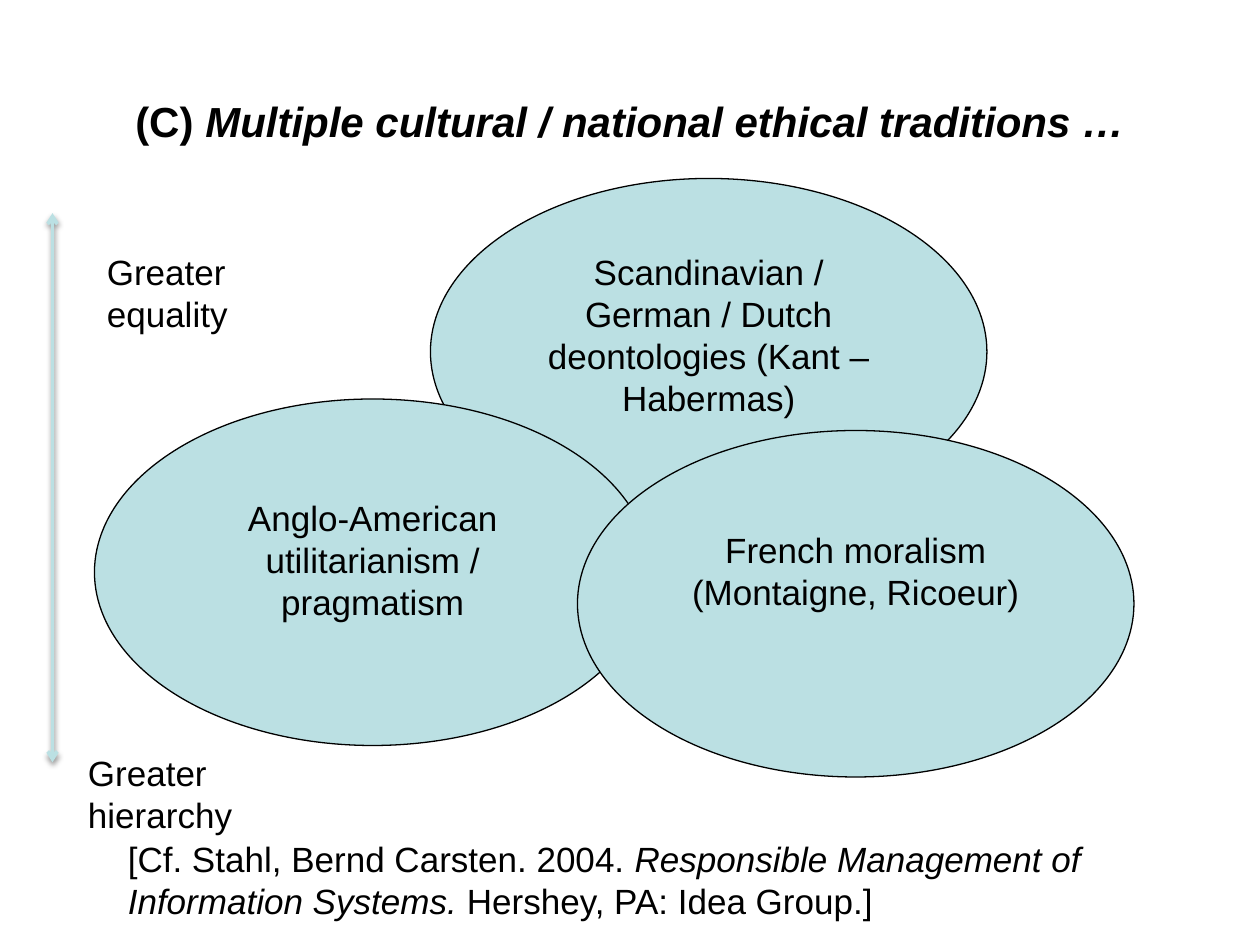
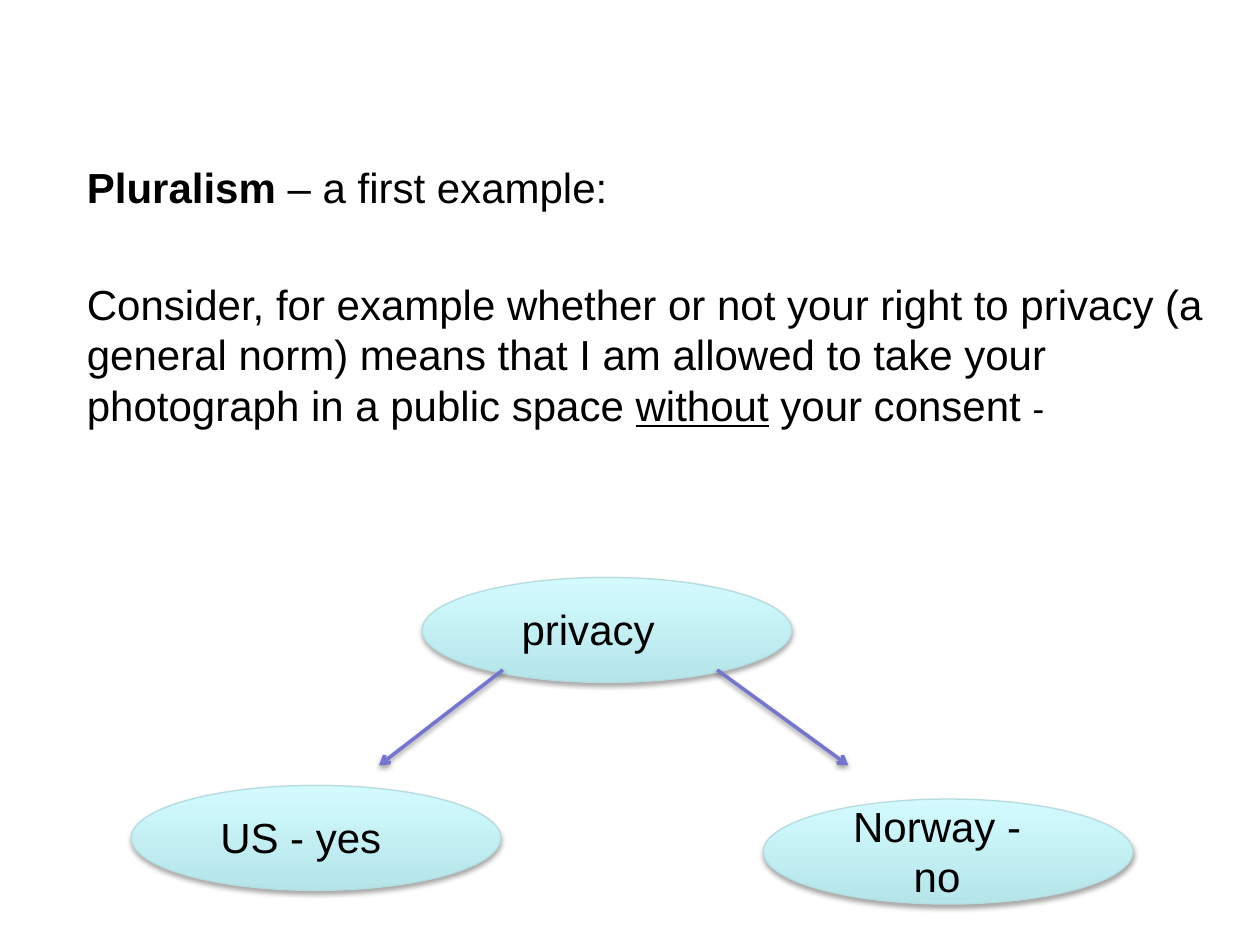
from lxml import etree
from pptx import Presentation
from pptx import util as u
from pptx.dml.color import RGBColor
from pptx.enum import shapes as kinds, text as t
from pptx.oxml import parse_xml
from pptx.oxml.ns import nsdecls, qn

# Grid of 120 columns by 90 rows; one cell is a twelfth of an inch.
COLUMNS, ROWS = 120, 90
CELL = u.Inches(10) // COLUMNS

FONT = "Arial"
BLACK = RGBColor(0x00, 0x00, 0x00)
PALE_TEAL = RGBColor(0xBB, 0xE0, 0xE3)
GRADIENT = (RGBColor(0xB5, 0xE5, 0xE9), RGBColor(0xD3, 0xFB, 0xFF))
BUBBLE_EDGE = RGBColor(0xB6, 0xDC, 0xDF)
VIOLET = RGBColor(0x75, 0x75, 0xD1)
CENTER = t.PP_ALIGN.CENTER


def cells(*values):
    return [round(value * CELL) for value in values]


def add_text(shapes, box, *paragraphs, size=20, align=None, spacing=None, gap=0, grow=True):
    """Each paragraph is a list of (text, font settings) runs, or a plain string."""
    frame = shapes.add_textbox(*cells(*box)).text_frame
    frame.word_wrap = True
    frame.auto_size = t.MSO_AUTO_SIZE.SHAPE_TO_FIT_TEXT if grow else t.MSO_AUTO_SIZE.NONE
    for index, runs in enumerate(paragraphs):
        paragraph = frame.add_paragraph() if index else frame.paragraphs[0]
        paragraph.alignment = align
        paragraph.line_spacing = spacing
        paragraph.space_before = u.Pt(gap if index else 0)
        for words, settings in [(runs, {})] if isinstance(runs, str) else runs:
            run = paragraph.add_run()
            run.text = words
            run.font.name = FONT
            run.font.size = u.Pt(size)
            run.font.color.rgb = BLACK
            for name, value in settings.items():
                setattr(run.font, name, value)


def add_shadow(shape, opacity, distance):
    properties = shape._element.spPr
    for effects in properties.findall(qn("a:effectLst")):
        properties.remove(effects)
    properties.append(parse_xml(
        f'<a:effectLst {nsdecls("a")}><a:outerShdw blurRad="{u.Pt(3.1)}" '
        f'dist="{u.Pt(distance)}" dir="5400000" rotWithShape="0"><a:srgbClr val="000000">'
        f'<a:alpha val="{opacity * 1000}"/></a:srgbClr></a:outerShdw></a:effectLst>'))


def add_ellipse(shapes, box, edge):
    ellipse = shapes.add_shape(kinds.MSO_SHAPE.OVAL, *cells(*box))
    ellipse.shadow.inherit = False
    ellipse.line.color.rgb = edge
    ellipse.line.width = u.Pt(0.75)
    return ellipse


def add_arrow(shapes, start, end, color, both_ends=False):
    arrow = shapes.add_connector(kinds.MSO_CONNECTOR.STRAIGHT, *cells(*start, *end))
    arrow.line.color.rgb = color
    arrow.line.width = u.Pt(2)
    line = arrow.line._get_or_add_ln()
    for tag in ("a:headEnd", "a:tailEnd") if both_ends else ("a:tailEnd",):
        etree.SubElement(line, qn(tag), type="arrow")
    add_shadow(arrow, opacity=38, distance=1.6)


def tradition_circles(shapes, left, top):
    """Three overlapping ellipses, with their labels in front of them all."""
    width, height = 53, 33
    traditions = [
        (32, 0, 6.3, 20.4, "Scandinavian / German / Dutch deontologies (Kant – Habermas)"),
        (0, 21, 8.7, 15.6, "Anglo-American utilitarianism / pragmatism"),
        (46, 24, 8.7, 15.6, "French moralism (Montaigne, Ricoeur)"),
    ]
    for column, row, *_ in traditions:
        ellipse = add_ellipse(shapes, (left + column, top + row, width, height), BLACK)
        ellipse.fill.solid()
        ellipse.fill.fore_color.rgb = PALE_TEAL
    for column, row, drop, label_height, label in traditions:
        add_text(shapes, (left + column + 8.5, top + row + drop, 36, label_height),
                 label, align=CENTER)


def equality_scale(shapes, left, top, height):
    add_arrow(shapes, (left, top), (left, top + height), PALE_TEAL, both_ends=True)
    add_text(shapes, (left + 4, top + 3, 24, 4.8), "Greater equality")
    add_text(shapes, (left + 2.2, top + height - 1.6, 24, 4.8), "Greater hierarchy")


def traditions_slide(slide):
    shapes = slide.shapes
    tradition_circles(shapes, 9, 17)
    add_text(shapes, (11, 79.2, 101, 10.8), [
        ("[Cf. Stahl, Bernd Carsten. 2004.", {}),
        (" Responsible Management of Information Systems. ", {"italic": True}),
        ("Hershey, PA: Idea Group.]", {})])
    add_text(shapes, (5, 8.9, 110, 5.9), [
        ("(C) ", {"bold": True}),
        ("Multiple cultural / national ethical traditions …", {"bold": True, "italic": True})],
        size=24, align=CENTER, spacing=0.95)
    equality_scale(shapes, 5, 20.3, 52.3)


def add_bubble(shapes, left, top, label, label_left=7.3, label_top=1.9,
               label_height=6, align=None):
    bubble = add_ellipse(shapes, (left, top, 35.2, 10), BUBBLE_EDGE)
    bubble.fill.gradient()
    bubble.fill.gradient_angle = 90
    for stop, color in zip(bubble.fill.gradient_stops, GRADIENT):
        stop.color.rgb = color
    add_shadow(bubble, opacity=35, distance=1.8)
    add_text(shapes, (left + label_left, top + label_top, 18.5, label_height),
             label, size=24, align=align)


def privacy_tree(shapes, left, top):
    add_bubble(shapes.add_group_shape().shapes, left + 27.7, top, "privacy", label_left=8.3)
    add_bubble(shapes, left, top + 19.8, "US - yes")
    add_bubble(shapes, left + 60.2, top + 21.1, "Norway - no",
               label_top=-0.5, label_height=10.9, align=CENTER)
    for start, end in ((35.4, 23.6), (55.8, 68.3)):
        add_arrow(shapes, (left + start, top + 8.8), (left + end, top + 17.9), VIOLET)


def pluralism_slide(slide):
    add_text(slide.shapes, (7.1, 14.8, 109.5, 65.3), [
        ("Pluralism", {"bold": True}), (" – a first example:", {})], [
        ("Consider, for example whether or not your right to privacy (a general norm) "
         "means that I am allowed to take your photograph in a public space ", {}),
        ("without", {"underline": True}),
        (" your consent ", {}),
        ("-", {"size": u.Pt(20)})],
        size=24, gap=38, grow=False)
    privacy_tree(slide.shapes, 12.5, 55)


def main():
    presentation = Presentation()
    presentation.slide_width, presentation.slide_height = cells(COLUMNS, ROWS)
    for build in (traditions_slide, pluralism_slide):
        build(presentation.slides.add_slide(presentation.slide_layouts[6]))
    presentation.save("out.pptx")


if __name__ == "__main__":
    main()
